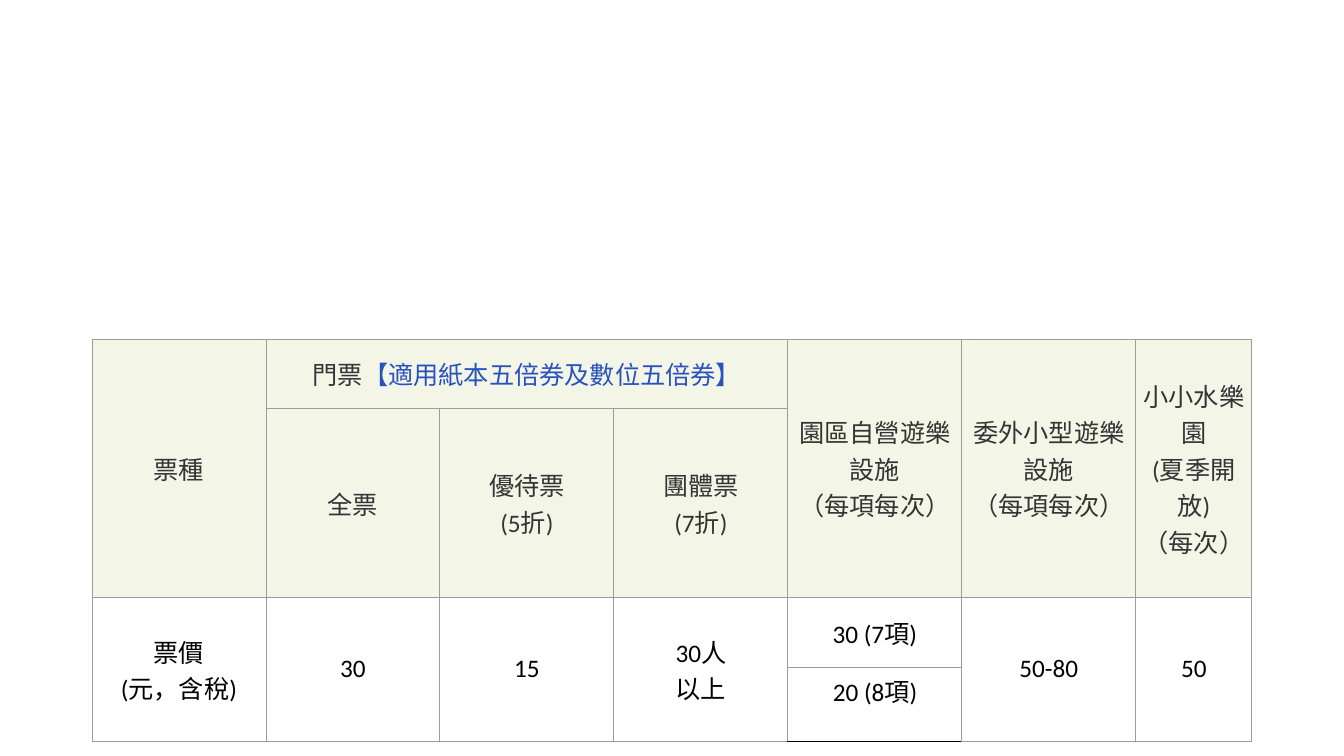
from dataclasses import dataclass

from lxml.etree import SubElement
from pptx import Presentation
from pptx.dml.color import RGBColor
from pptx.enum.text import MSO_ANCHOR, PP_ALIGN
from pptx.oxml.ns import qn
from pptx.util import Emu, Pt


@dataclass(frozen=True)
class Theme:
    font: str = "Calibri"
    size: float = 18
    heading: str = "343434"
    voucher: str = "2A52BE"
    body: str = "000000"
    heading_fill: str = "F3F6E7"
    body_fill: str = "FFFFFF"
    border: str = "9C9C9C"
    border_width: float = 0.75
    edge_width: float = 1


THEME = Theme()
COLUMNS = [174] * 6 + [116]
ROWS = [70, 188, 70, 74]
HEADINGS = [
    (0, 0, 2, 1, "票種"),
    (0, 4, 2, 1, "園區自營遊樂設施\n（每項每次）"),
    (0, 5, 2, 1, "委外小型遊樂設施\n（每項每次）"),
    (0, 6, 2, 1, "小小水樂園\n(夏季開放)\n（每次）"),
    (1, 1, 1, 1, "全票"),
    (1, 2, 1, 1, "優待票\n(5折)"),
    (1, 3, 1, 1, "團體票\n(7折)"),
]
PRICES = [
    (2, 0, 2, 1, "票價\n(元，含稅)"),
    (2, 1, 2, 1, "30"),
    (2, 2, 2, 1, "15"),
    (2, 3, 2, 1, "30人\n以上"),
    (2, 4, 1, 1, "30 (7項)"),
    (2, 5, 2, 1, "50-80"),
    (2, 6, 2, 1, "50"),
]


def px(n):
    """Turn slide pixels into EMU."""
    return Emu(round(n * 914400 / 100.8))


def add_border(cell, side, color, width):
    """Draw one side of a cell."""
    ln = SubElement(cell._tc.get_or_add_tcPr(), qn(f"a:ln{side}"), w=str(Pt(width)))
    fill = SubElement(ln, qn("a:solidFill"))
    SubElement(fill, qn("a:srgbClr"), val=color)


def add_text(p, text, color):
    """Add text to a paragraph, one run per line."""
    for i, line in enumerate(text.split("\n")):
        if i:
            p.add_line_break()
        r = p.add_run()
        r.text = line
        r.font.name = THEME.font
        r.font.size = Pt(THEME.size)
        r.font.color.rgb = RGBColor.from_string(color)


def add_table(s):
    """Add the empty bordered price table."""
    tbl = s.shapes.add_table(len(ROWS), len(COLUMNS), px(92), px(339),
                             px(sum(COLUMNS)), px(sum(ROWS))).table
    tbl.first_row = False
    tbl.horz_banding = False
    for column, width in zip(tbl.columns, COLUMNS):
        column.width = px(width)
    for row, height in zip(tbl.rows, ROWS):
        row.height = px(height)
    for cell in tbl.iter_cells():
        for side in "LRT":
            add_border(cell, side, THEME.border, THEME.border_width)
        if cell is not None and cell._tc is tbl.cell(3, 4)._tc:
            add_border(cell, "B", THEME.body, THEME.edge_width)
        else:
            add_border(cell, "B", THEME.border, THEME.border_width)
    return tbl


def fill_cell(tbl, row, col, rows, cols, parts, fill):
    """Merge, fill and write one centred cell."""
    cell = tbl.cell(row, col)
    if rows * cols > 1:
        cell.merge(tbl.cell(row + rows - 1, col + cols - 1))
    cell.fill.solid()
    cell.fill.fore_color.rgb = RGBColor.from_string(fill)
    cell.vertical_anchor = MSO_ANCHOR.MIDDLE
    cell.margin_left = cell.margin_right = px(3)
    cell.margin_top = cell.margin_bottom = px(3)
    p = cell.text_frame.paragraphs[0]
    p.alignment = PP_ALIGN.CENTER
    for text, color in parts:
        add_text(p, text, color)


def add_second_price(tbl):
    """Write the lower ride price, indented from the left."""
    cell = tbl.cell(3, 4)
    cell.fill.background()
    cell.margin_left = px(45)
    add_text(cell.text_frame.paragraphs[0], "20 (8項)", THEME.body)


def main():
    """Build and save the ticket price slide."""
    prs = Presentation()
    prs.slide_width, prs.slide_height = px(1344), px(756)
    s = prs.slides.add_slide(prs.slide_layouts[6])
    tbl = add_table(s)
    admission = [("門票", THEME.heading), ("【適用紙本五倍券及數位五倍券】", THEME.voucher)]
    fill_cell(tbl, 0, 1, 1, 3, admission, THEME.heading_fill)
    for *place, text in HEADINGS:
        fill_cell(tbl, *place, [(text, THEME.heading)], THEME.heading_fill)
    for *place, text in PRICES:
        fill_cell(tbl, *place, [(text, THEME.body)], THEME.body_fill)
    add_second_price(tbl)
    prs.save("out.pptx")


if __name__ == "__main__":
    main()
